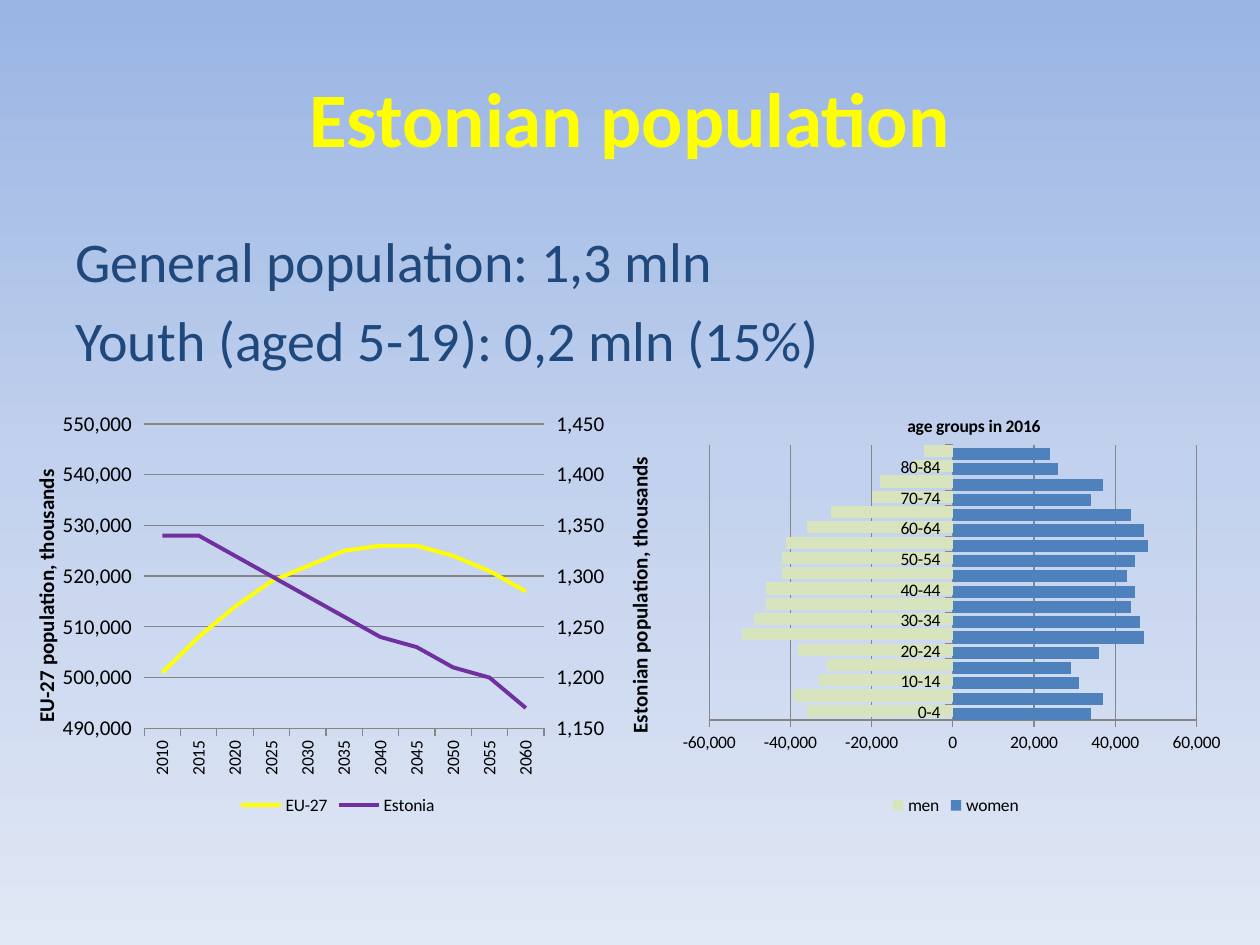
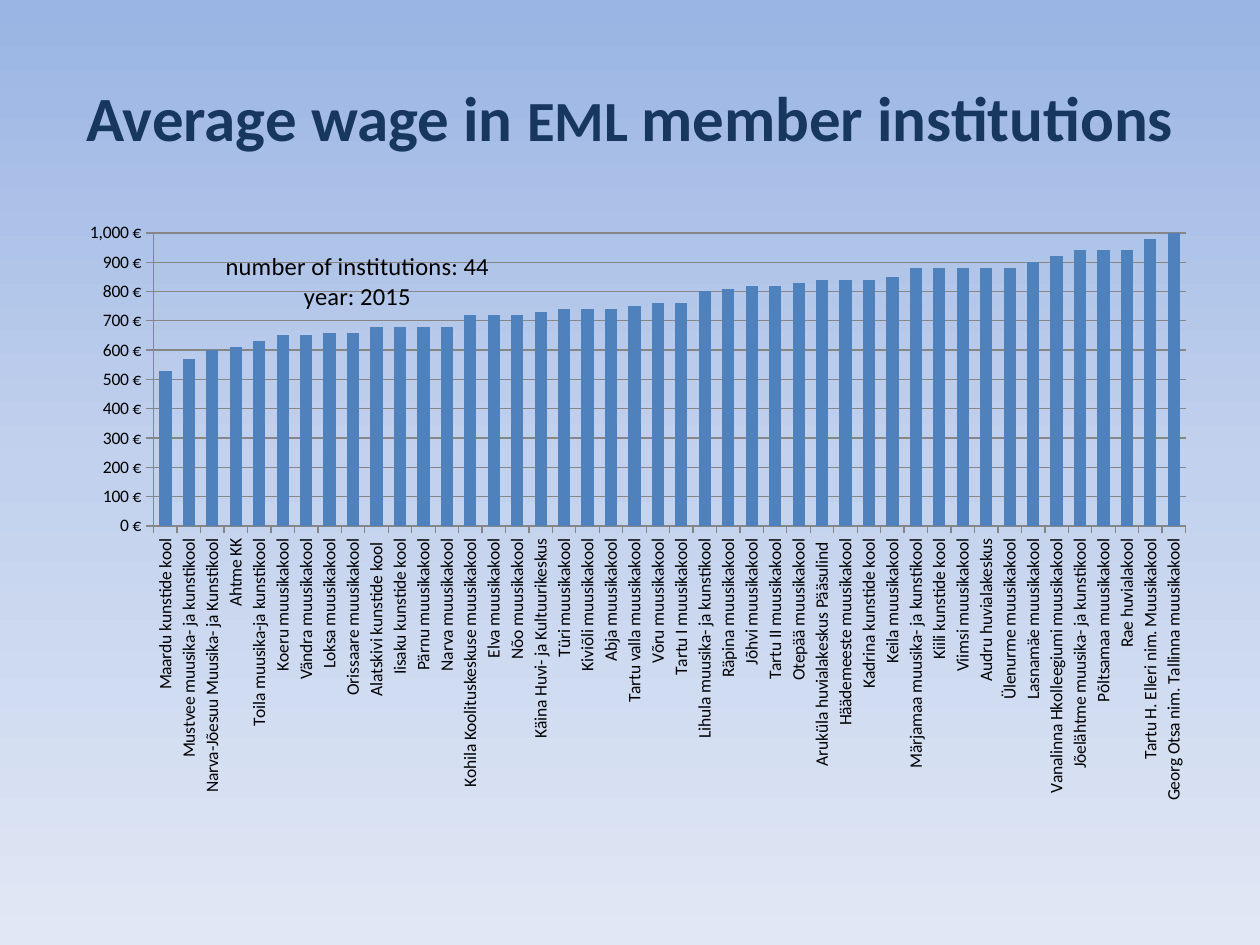
from copy import deepcopy

from lxml import etree
from pptx import Presentation
from pptx.chart.data import CategoryChartData
from pptx.dml.color import RGBColor
from pptx.enum.chart import XL_CHART_TYPE, XL_LEGEND_POSITION, XL_TICK_MARK
from pptx.enum.text import MSO_ANCHOR, PP_ALIGN
from pptx.oxml.ns import qn
from pptx.util import Inches, Pt

LINE, BAR, COLUMN = (XL_CHART_TYPE.LINE, XL_CHART_TYPE.BAR_CLUSTERED,
                     XL_CHART_TYPE.COLUMN_CLUSTERED)
BOTTOM = XL_LEGEND_POSITION.BOTTOM
OUTSIDE = XL_TICK_MARK.OUTSIDE
MIDDLE, TOP = MSO_ANCHOR.MIDDLE, MSO_ANCHOR.TOP
CENTER, LEFT = PP_ALIGN.CENTER, PP_ALIGN.LEFT

FONT = "Calibri"
BACKGROUND = [(0, "9AB5E4"), (0.5, "C2D1ED"), (1, "E1E8F5")]
YELLOW, NAVY, DARK_NAVY = "FFFF00", "1F497D", "17375E"
BLUE, GREEN, PURPLE = "4F81BD", "D7E4BD", "7030A0"
BLACK, GRAY = "000000", "868686"
THOUSANDS, EUROS = "#,##0", '#,##0\\ "€"'
UPWARD = "-5400000"

YEARS = [str(year) for year in range(2010, 2061, 5)]
EU_POPULATION = [501000, 508000, 514000, 519000, 522000, 525000, 526000, 526000,
                 524000, 521000, 517000]
ESTONIAN_POPULATION = [1340, 1340, 1320, 1300, 1280, 1260, 1240, 1230, 1210, 1200, 1170]

AGE_GROUPS = [f"{age}-{age + 4}" for age in range(0, 85, 5)] + ["85 ja vanemad"]
WOMEN = [34000, 37000, 31000, 29000, 36000, 47000, 46000, 44000, 45000,
         43000, 45000, 48000, 47000, 44000, 34000, 37000, 26000, 24000]
MEN = [-36000, -39000, -33000, -31000, -38000, -52000, -49000, -46000, -46000,
       -42000, -42000, -41000, -36000, -30000, -20000, -18000, -10000, -7000]

WAGES = {
    "Maardu kunstide kool": 530, "Mustvee muusika- ja kunstikool": 570,
    "Narva-Jõesuu Muusika- ja Kunstikool": 600, "Ahtme KK": 610,
    "Toila muusika-ja kunstikool": 630, "Koeru muusikakool": 650,
    "Vändra muusikakool": 650, "Loksa muusikakool": 660,
    "Orissaare muusikakool": 660, "Alatskivi kunstide kool ": 680,
    "Iisaku kunstide kool": 680, "Pärnu muusikakool": 680,
    "Narva muusikakool": 680, "Kohila Koolituskeskuse muusikakool": 720,
    "Elva muusikakool": 720, "Nõo muusikakool": 720,
    "Käina Huvi- ja Kultuurikeskus": 730, "Türi muusikakool": 740,
    "Kiviõli muusikakool": 740, "Abja muusikakool": 740,
    "Tartu valla muusikakool": 750, "Võru muusikakool": 760,
    "Tartu I muusikakool": 760, "Lihula muusika- ja kunstikool": 800,
    "Räpina muusikakool": 810, "Jõhvi muusikakool": 820,
    "Tartu II muusikakool": 820, "Otepää muusikakool": 830,
    "Aruküla huvialakeskus Pääsulind ": 840, "Häädemeeste muusikakool": 840,
    "Kadrina kunstide kool": 840, "Keila muusikakool": 850,
    "Märjamaa muusika- ja kunstikool": 880, "Kiili kunstide kool": 880,
    "Viimsi muusikakool": 880, "Audru huvialakeskus": 880,
    "Ülenurme muusikakool": 880, "Lasnamäe muusikakool": 900,
    "Vanalinna Hkolleegiumi muusikakool": 920,
    "Jõelähtme muusika- ja kunstikool": 940, "Põltsamaa muusikakool": 940,
    "Rae huvialakool": 940, "Tartu H. Elleri nim. Muusikakool": 980,
    "Georg Otsa nim. Tallinna muusikakool": 1000,
}


def rgb(color):
    return RGBColor.from_string(color)


def style_font(font, size, color=BLACK, bold=False):
    font.name, font.size, font.bold = FONT, Pt(size), bold
    font.color.rgb = rgb(color)


def set_layout(element, x, y, w=None, h=None):
    """Place a chart part by hand, in fractions of the chart's size."""
    for old in element.findall(qn("c:layout")):
        element.remove(old)
    layout = etree.Element(qn("c:layout"))
    manual = etree.SubElement(layout, qn("c:manualLayout"))
    settings = {"xMode": "edge", "yMode": "edge", "x": x, "y": y}
    if w is not None:
        settings = {"layoutTarget": "inner", **settings, "w": w, "h": h}
    for tag, value in settings.items():
        etree.SubElement(manual, qn(f"c:{tag}")).set("val", str(value))
    text = element.find(qn("c:tx"))
    element.insert(0 if text is None else element.index(text) + 1, layout)


def style_title(title, text, size, x, y, bold=True):
    """Fill a chart title or an axis title and place it."""
    title.text_frame.text = text
    for p in title.text_frame.paragraphs:
        for r in p.runs:
            style_font(r.font, size, bold=bold)
    set_layout(title._element, x, y)


def style_value_axis(axis, low, high, step, number_format, size=10):
    axis.minimum_scale, axis.maximum_scale, axis.major_unit = low, high, step
    axis.tick_labels.number_format = number_format
    axis.tick_labels.number_format_is_linked = False
    style_font(axis.tick_labels.font, size)
    axis.major_gridlines.format.line.color.rgb = rgb(GRAY)


def turn_labels_upward(axis):
    style_font(axis.tick_labels.font, 10)
    body = axis._element.find(qn("c:txPr")).find(qn("a:bodyPr"))
    body.set("rot", UPWARD)
    body.set("vert", "horz")


def move_last_series_right(chart, title, title_x, title_y, low, high, step):
    """Give the last series its own value axis on the right."""
    plot_area = chart._chartSpace.find(".//" + qn("c:plotArea"))
    left_plot = plot_area.find(qn("c:lineChart"))
    right_plot = deepcopy(left_plot)
    left_plot.remove(left_plot.findall(qn("c:ser"))[-1])
    for ser in right_plot.findall(qn("c:ser"))[:-1]:
        right_plot.remove(ser)
    left_plot.addnext(right_plot)

    left_axis = plot_area.find(qn("c:valAx"))
    hidden_axis = deepcopy(plot_area.find(qn("c:catAx")))
    right_axis = deepcopy(left_axis)
    left_axis.addnext(right_axis)
    right_axis.addnext(hidden_axis)
    for ax_id, new_id in zip(right_plot.findall(qn("c:axId")), ("5001", "5002")):
        ax_id.set("val", new_id)

    def put(axis, **values):
        for tag, value in values.items():
            axis.find(".//" + qn(f"c:{tag}")).set("val", str(value))

    put(hidden_axis, axId="5001", crossAx="5002", delete="1")
    put(right_axis, axId="5002", crossAx="5001", axPos="r", crosses="max",
        min=low, max=high, majorUnit=step)
    right_axis.remove(right_axis.find(qn("c:majorGridlines")))
    axis_title = right_axis.find(qn("c:title"))
    axis_title.find(".//" + qn("a:t")).text = title
    set_layout(axis_title, title_x, title_y)


class Deck:
    """Holds the presentation, its shared style and the current slide."""

    def __init__(self):
        self.prs = Presentation()
        self.prs.slide_width, self.prs.slide_height = Inches(10), Inches(7.5)

    def new_slide(self, title_runs, color):
        self.s = self.prs.slides.add_slide(self.prs.slide_layouts[6])
        fill = self.s.background.fill
        fill.gradient()
        fill.gradient_angle = 270
        stops = self.s._element.find(".//" + qn("a:gsLst"))
        stops.append(deepcopy(stops[-1]))
        for stop, (position, stop_color) in zip(fill.gradient_stops, BACKGROUND):
            stop.position = position
            stop.color.rgb = rgb(stop_color)
        self.text(0.3, 1.25, [title_runs], color, True, CENTER, MIDDLE)

    def text(self, y, h, paragraphs, color, bold=False, align=LEFT, anchor=TOP, before=0):
        """Add a full-width text box; each paragraph is a list of (text, size)."""
        tf = self.s.shapes.add_textbox(Inches(0.5), Inches(y), Inches(9), Inches(h)).text_frame
        tf.word_wrap, tf.vertical_anchor = True, anchor
        for i, runs in enumerate(paragraphs):
            p = tf.add_paragraph() if i else tf.paragraphs[0]
            p.alignment, p.space_before = align, Pt(before)
            for text, size in runs:
                r = p.add_run()
                r.text = text
                style_font(r.font, size, color, bold)

    def chart(self, kind, box, plot_box, categories, series, legend=True):
        """Add a chart; series is a list of (name, values, colour)."""
        data = CategoryChartData()
        data.categories = categories
        for name, values, _ in series:
            data.add_series(name, values)
        chart = self.s.shapes.add_chart(kind, *map(Inches, box), data).chart
        style_font(chart.font, 10)
        chart.has_title = False
        chart.has_legend = legend
        if legend:
            chart.legend.position = BOTTOM
            chart.legend.include_in_layout = False
        plot = chart.plots[0]
        plot.vary_by_categories = False
        for ser, (_, _, color) in zip(plot.series, series):
            if kind == LINE:
                ser.smooth = False
                ser.format.line.width = Pt(2.25)
                ser.format.line.color.rgb = rgb(color)
            else:
                ser.invert_if_negative = False
                ser.format.fill.solid()
                ser.format.fill.fore_color.rgb = rgb(color)
        for axis in (chart.category_axis, chart.value_axis):
            axis.major_tick_mark = OUTSIDE
            axis.format.line.color.rgb = rgb(GRAY)
        chart.value_axis.has_major_gridlines = True
        set_layout(chart._chartSpace.find(".//" + qn("c:plotArea")), *plot_box)
        return chart


def build_population(deck):
    deck.new_slide([("Estonian population", 44)], YELLOW)
    deck.text(1.75, 4.95, [[("General population: 1,3 mln", 32)],
                           [("Youth (aged 5-19): 0,2 mln (15%)", 32)]], NAVY, before=6.4)

    trend = deck.chart(LINE, (0.12, 3.2, 5.12, 3.31), (0.2, 0.05, 0.62, 0.73), YEARS,
                       [("EU-27", EU_POPULATION, YELLOW),
                        ("Estonia", ESTONIAN_POPULATION, PURPLE)])
    turn_labels_upward(trend.category_axis)
    axis = trend.value_axis
    style_value_axis(axis, 490000, 550000, 10000, THOUSANDS, 12)
    axis.format.line.fill.background()
    style_title(axis.axis_title, "EU-27 population, thousands", 12, 0.02, 0.15)
    body = axis.axis_title._element.find(".//" + qn("a:bodyPr"))
    body.set("rot", UPWARD)
    body.set("vert", "horz")
    move_last_series_right(trend, "Estonian population, thousands", 0.94, 0.12, 1150, 1450, 50)

    pyramid = deck.chart(BAR, (5.31, 3.2, 4.55, 3.31), (0.07, 0.1, 0.85, 0.66), AGE_GROUPS,
                         [("women", WOMEN, BLUE), ("men", MEN, GREEN)])
    style_value_axis(pyramid.value_axis, -60000, 60000, 20000, THOUSANDS)
    pyramid.plots[0].overlap, pyramid.plots[0].gap_width = 74, 0
    style_title(pyramid.chart_title, "age groups in 2016", 10, 0.41, 0.02)


def build_wages(deck):
    deck.new_slide([("Average wage in ", 36), ("EML ", 32.4), ("member institutions", 36)],
                   DARK_NAVY)
    wages = deck.chart(COLUMN, (0.5, 1.75, 9, 4.95), (0.08, 0.02, 0.91, 0.47), list(WAGES),
                       [("Series 1", list(WAGES.values()), BLUE)], legend=False)
    turn_labels_upward(wages.category_axis)
    style_value_axis(wages.value_axis, 0, 1000, 100, EUROS)
    wages.plots[0].gap_width = 92
    style_title(wages.chart_title, "number of institutions: 44\nyear: 2015", 14,
                0.14, 0.04, bold=False)
    wages.chart_title._element.find(qn("c:overlay")).set("val", "1")


def main():
    deck = Deck()
    build_population(deck)
    build_wages(deck)
    deck.prs.save("out.pptx")


if __name__ == "__main__":
    main()
